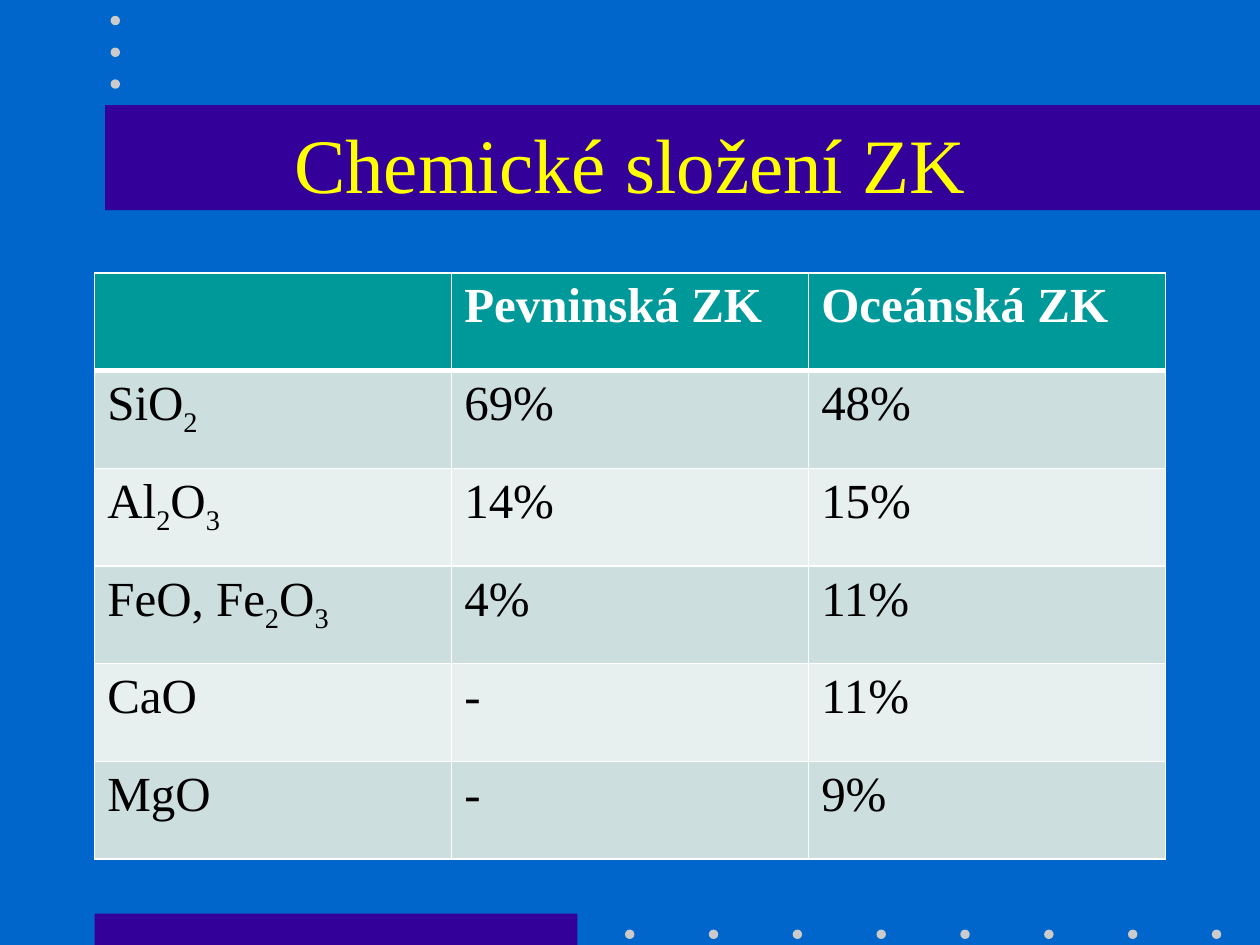
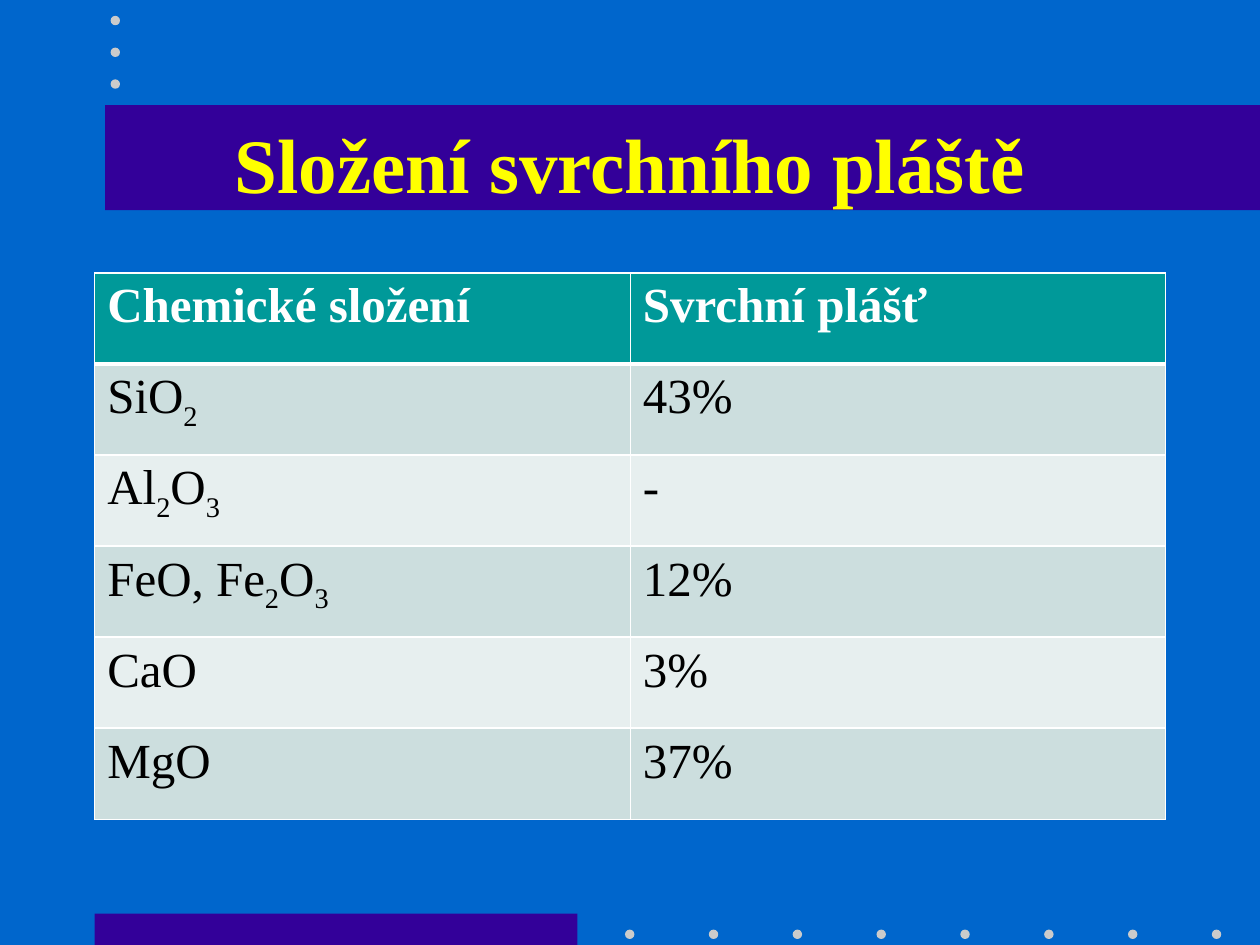
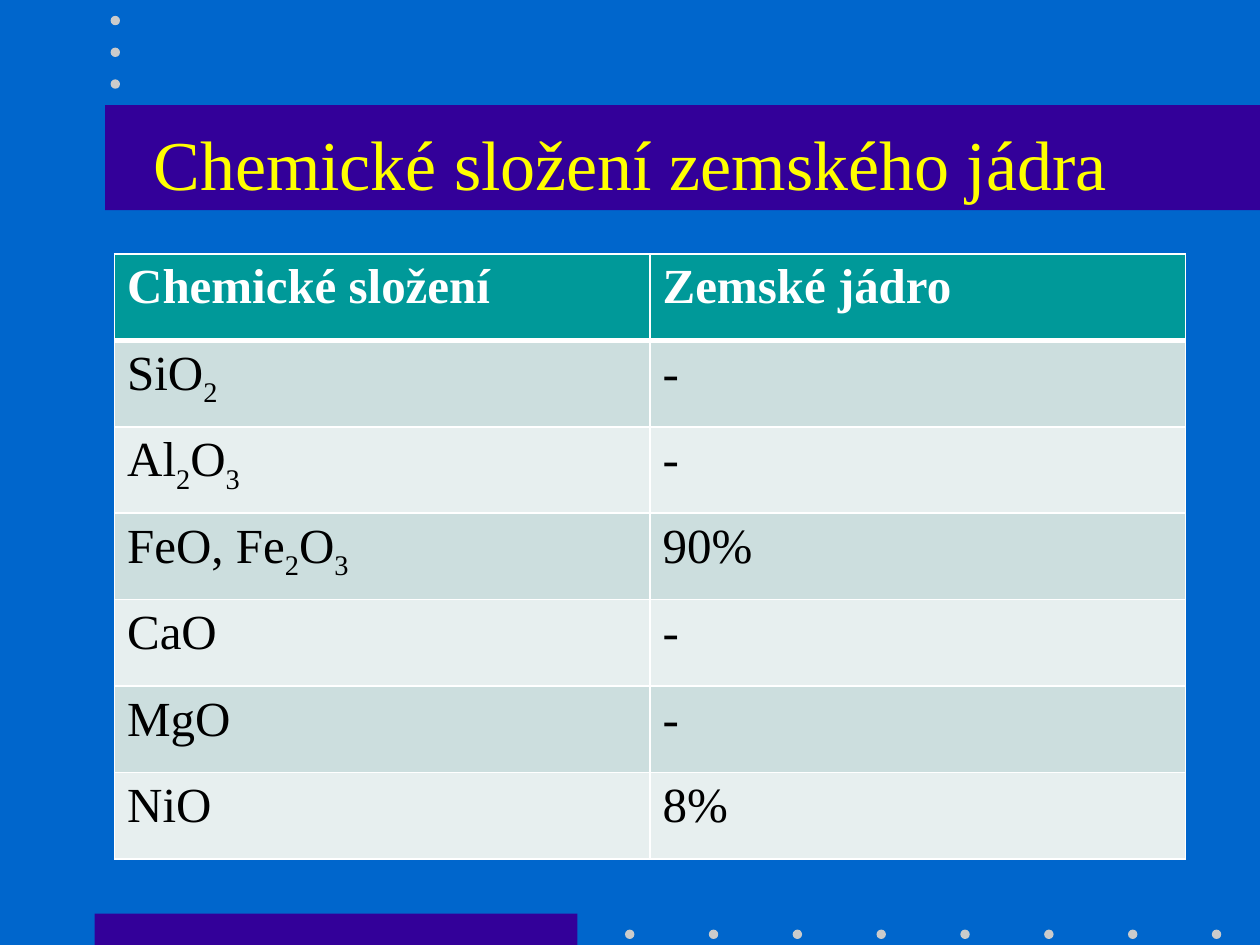
from itertools import groupby

from lxml.etree import SubElement as Sub
from pptx import Presentation
from pptx.dml.color import RGBColor
from pptx.enum.shapes import MSO_SHAPE as Kind
from pptx.enum.text import MSO_ANCHOR as Anchor, PP_ALIGN as Align
from pptx.oxml.ns import qn
from pptx.util import Cm, Pt

BLUE = RGBColor(0x00, 0x66, 0xCC)
VIOLET = RGBColor(0x33, 0x00, 0x99)
GREY = RGBColor(0xCB, 0xCB, 0xCB)
YELLOW = RGBColor(0xFF, 0xFF, 0x00)
TEAL = RGBColor(0x00, 0x99, 0x99)
MIST = RGBColor(0xCC, 0xDE, 0xDE)
PALE = RGBColor(0xE7, 0xEF, 0xEF)
WHITE = RGBColor(0xFF, 0xFF, 0xFF)
BLACK = RGBColor(0x00, 0x00, 0x00)

OXIDES = ["SiO2", "Al2O3", "FeO, Fe2O3", "CaO", "MgO"]


class Deck:
    """Holds the shared style and the slide being built."""

    font = "Times New Roman"
    head = {"size": Pt(28), "bold": True}
    body = {"size": Pt(28), "bold": False}

    def __init__(self):
        """Set up the page size and background."""
        self.prs = Presentation()
        self.prs.slide_width, self.prs.slide_height = Cm(25.4), Cm(19.05)
        fill = self.prs.slide_master.background.fill
        fill.solid()
        fill.fore_color.rgb = BLUE

    def start(self):
        """Add a slide with its bands and dots."""
        self.slide = self.prs.slides.add_slide(self.prs.slide_layouts[6])
        self.shape(Kind.RECTANGLE, VIOLET, 1.91, 18.42, 9.73, 0.63)
        for i in range(8):
            self.dot(12.6 + 1.69 * i, 18.74)
        self.shape(Kind.RECTANGLE, VIOLET, 2.12, 2.12, 23.28, 2.12)
        for i in range(3):
            self.dot(2.23, 0.32 + 0.64 * i)

    def shape(self, kind, color, *box):
        """Draw a plain filled shape."""
        item = self.slide.shapes.add_shape(kind, *map(Cm, box))
        item.shadow.inherit = False
        item.fill.solid()
        item.fill.fore_color.rgb = color
        item.line.fill.background()

    def dot(self, left, top):
        """Draw a small grey dot."""
        self.shape(Kind.OVAL, GREY, left, top, 0.19, 0.19)

    def text(self, para, words, color, style):
        """Add a run in the deck font."""
        run = para.add_run()
        run.text = words
        for name, value in {"name": self.font, **style}.items():
            setattr(run.font, name, value)
        run.font.color.rgb = color
        return run

    def title(self, words, size=44, bold=False):
        """Put the slide title over the band."""
        box = self.slide.shapes.add_textbox(*map(Cm, (1.91, 1.69, 21.59, 3.18)))
        frame = box.text_frame
        for name, value in {"word_wrap": True, "vertical_anchor": Anchor.MIDDLE}.items():
            setattr(frame, name, value)
        para = frame.paragraphs[0]
        para.alignment = Align.CENTER
        self.text(para, words, YELLOW, {"size": Pt(size), "bold": bold})

    def edge(self, cell, row):
        """Give a cell white borders, thick below the header."""
        props = cell._tc.get_or_add_tcPr()
        thick = {0: "lnB", 1: "lnT"}.get(row)
        for side in ("lnL", "lnR", "lnT", "lnB"):
            line = Sub(props, qn(f"a:{side}"), w=str(Pt(3 if side == thick else 1)))
            Sub(Sub(line, qn("a:solidFill")), qn("a:srgbClr"), val=str(WHITE))

    def cell(self, cell, row, col, words):
        """Fill a table cell, lowering digits in formulas."""
        self.edge(cell, row)
        cell.fill.solid()
        cell.fill.fore_color.rgb = (MIST if row % 2 else PALE) if row else TEAL
        color, style = (BLACK, self.body) if row else (WHITE, self.head)
        for low, part in groupby(words, lambda c: col == 0 and c.isdigit()):
            run = self.text(cell.text_frame.paragraphs[0], "".join(part), color, style)
            if low:
                run._r.get_or_add_rPr().set("baseline", "-25000")

    def table(self, rows, left, top, height):
        """Draw a table with equal rows and columns."""
        box = map(Cm, (left, top, 21.59, height))
        grid = self.slide.shapes.add_table(len(rows), len(rows[0]), *box).table
        for r, row in enumerate(rows):
            for c, words in enumerate(row):
                self.cell(grid.cell(r, c), r, c, words)


def main():
    """Build the three slides."""
    deck = Deck()

    deck.start()
    deck.title("Chemické složení ZK")
    land = ["Pevninská ZK", "69%", "14%", "4%", "-", "-"]
    sea = ["Oceánská ZK", "48%", "15%", "11%", "11%", "9%"]
    deck.table(list(zip(["", *OXIDES], land, sea)), 1.91, 5.5, 11.82)

    names = ["Chemické složení", *OXIDES]
    deck.start()
    deck.title("Složení svrchního pláště", bold=True)
    mantle = ["Svrchní plášť", "43%", "-", "12%", "3%", "37%"]
    deck.table(list(zip(names, mantle)), 1.91, 5.5, 11.02)

    deck.start()
    deck.title("Chemické složení zemského jádra", size=40)
    core = ["Zemské jádro", "-", "-", "90%", "-", "-", "8%"]
    deck.table(list(zip([*names, "NiO"], core)), 2.31, 5.12, 12.2)

    deck.prs.save("out.pptx")


if __name__ == "__main__":
    main()
